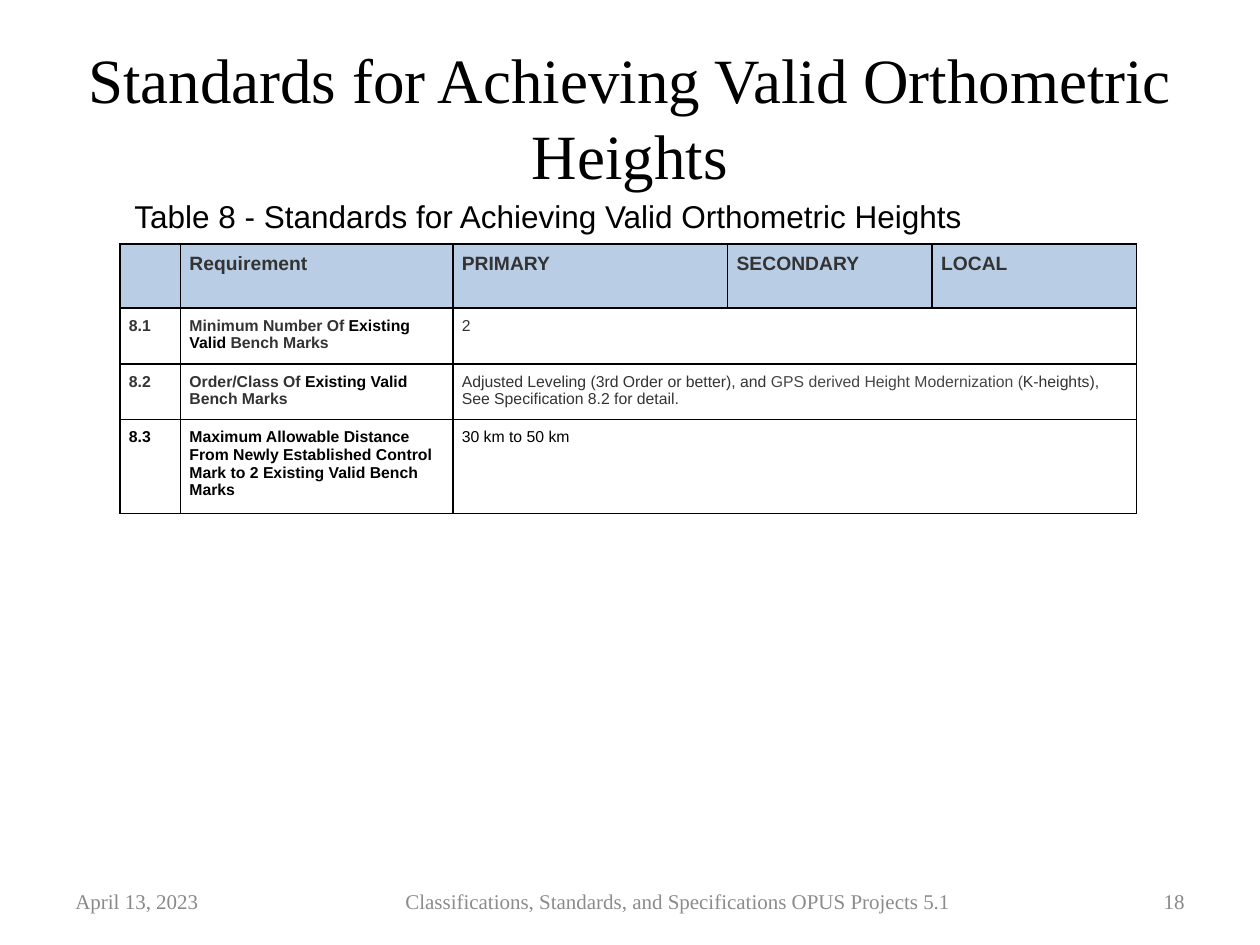
from dataclasses import dataclass

from lxml.etree import SubElement
from pptx import Presentation
from pptx.dml.color import RGBColor
from pptx.enum.text import MSO_ANCHOR as Anchor, PP_ALIGN as Align
from pptx.oxml.ns import qn
from pptx.util import Cm, Pt

SERIF, SANS = "Times New Roman", "Arial"
BLACK, DARK, SLATE, GREY = "000000", "333333", "444746", "898989"
HEADER_FILL, WHITE = "B9CDE5", "FFFFFF"
TITLE = "Standards for Achieving Valid Orthometric Heights"


@dataclass
class Label:
    text: str
    left: float
    top: float
    width: float
    font: str = SERIF
    size: float = 12
    color: str = GREY
    align: Align = Align.LEFT
    anchor: Anchor = Anchor.MIDDLE


@dataclass
class Run:
    text: str
    color: str = DARK


@dataclass
class Standard:
    number: Run
    requirement: list[Run]
    value: list[Run]
    height: float


FOOTER_TOP = 17.65
LABELS = [
    Label("April 13, 2023", 1.27, FOOTER_TOP, 3.56),
    Label("Classifications, Standards, and Specifications OPUS Projects 5.1",
          5.87, FOOTER_TOP, 15.6, color="8C8C8C", align=Align.CENTER),
    Label("18", 22.12, FOOTER_TOP, 2.01, align=Align.RIGHT),
    Label(f"Table 8 - {TITLE}", 2.46, 3.84, 17.68, SANS, 18, BLACK, anchor=Anchor.TOP),
]

HEADINGS = ["", "Requirement", "PRIMARY", "SECONDARY", "LOCAL"]
COLUMN_WIDTHS = [1.22, 5.49, 5.54, 4.12, 4.12]
HEADER_HEIGHT = 1.29
STANDARDS = [
    Standard(Run("8.1"),
             [Run("Minimum Number Of "), Run("Existing Valid ", BLACK), Run("Bench Marks")],
             [Run("2")], 1.12),
    Standard(Run("8.2"),
             [Run("Order/Class Of "), Run("Existing Valid ", BLACK), Run("Bench Marks")],
             [Run("Adjusted Leveling (3rd Order or better), and "),
              Run("GPS derived Height Modernization (", SLATE),
              Run("K-heights),  See Specification 8.2 for detail.")], 1.12),
    Standard(Run("8.3", BLACK),
             [Run("Maximum Allowable Distance From Newly Established Control Mark "
                  "to 2 Existing Valid Bench Marks", BLACK)],
             [Run("30 km to 50 km", BLACK)], 1.88),
]


def rgb(color: str) -> RGBColor:
    return RGBColor.from_string(color)


def format_font(font, name: str, size: float, color: str | None = None, bold: bool = False) -> None:
    font.name, font.size, font.bold = name, Pt(size), bold
    if color:
        font.color.rgb = rgb(color)


def add_label(slide, label: Label) -> None:
    box = slide.shapes.add_textbox(Cm(label.left), Cm(label.top), Cm(label.width), Cm(1.02))
    tf = box.text_frame
    tf.word_wrap = True
    tf.vertical_anchor = label.anchor
    p = tf.paragraphs[0]
    p.text, p.alignment = label.text, label.align
    format_font(p.font, label.font, label.size, label.color)


def style_cell(cell, fill: str) -> None:
    """Give the cell equal margins, a black outline and a solid fill."""
    cell.margin_left = cell.margin_right = cell.margin_top = cell.margin_bottom = Cm(0.18)
    props = cell._tc.get_or_add_tcPr()
    for side in ("a:lnL", "a:lnR", "a:lnT", "a:lnB"):
        line = SubElement(props, qn(side), w=str(Pt(1)))
        SubElement(SubElement(line, qn("a:solidFill")), qn("a:srgbClr"), val=BLACK)
    cell.fill.solid()
    cell.fill.fore_color.rgb = rgb(fill)


def write_cell(cell, runs: list[Run], size: float = 9, bold: bool = True) -> None:
    p = cell.text_frame.paragraphs[0]
    format_font(p.font, SANS, size, bold=bold)
    for run in runs:
        r = p.add_run()
        r.text = run.text
        format_font(r.font, SANS, size, run.color, bold)


def add_standards_table(slide) -> None:
    heights = [HEADER_HEIGHT] + [s.height for s in STANDARDS]
    table = slide.shapes.add_table(
        len(heights), len(COLUMN_WIDTHS), Cm(2.42), Cm(4.92),
        Cm(sum(COLUMN_WIDTHS)), Cm(sum(heights))).table
    table.horz_banding = False
    for column, width in zip(table.columns, COLUMN_WIDTHS):
        column.width = Cm(width)
    for i, height in enumerate(heights):
        table.rows[i].height = Cm(height)
        for cell in table.rows[i].cells:
            style_cell(cell, WHITE if i else HEADER_FILL)

    for col, heading in enumerate(HEADINGS):
        if heading:
            write_cell(table.cell(0, col), [Run(heading)], size=11)
    for row, standard in enumerate(STANDARDS, start=1):
        table.cell(row, 2).merge(table.cell(row, 4))
        write_cell(table.cell(row, 0), [standard.number])
        write_cell(table.cell(row, 1), standard.requirement)
        write_cell(table.cell(row, 2), standard.value, bold=False)


def add_title(slide) -> None:
    title = slide.shapes.title
    title.left, title.top, title.width, title.height = Cm(1.27), Cm(0.76), Cm(22.86), Cm(3.18)
    tf = title.text_frame
    tf.vertical_anchor = Anchor.MIDDLE
    p = tf.paragraphs[0]
    p.text, p.alignment = TITLE, Align.CENTER
    format_font(p.font, SERIF, 36, BLACK)


def main() -> None:
    prs = Presentation()
    prs.slide_width, prs.slide_height = Cm(25.4), Cm(19.05)
    slide = prs.slides.add_slide(prs.slide_layouts[5])
    add_title(slide)
    for label in LABELS:
        add_label(slide, label)
    add_standards_table(slide)
    prs.save("out.pptx")


if __name__ == "__main__":
    main()
